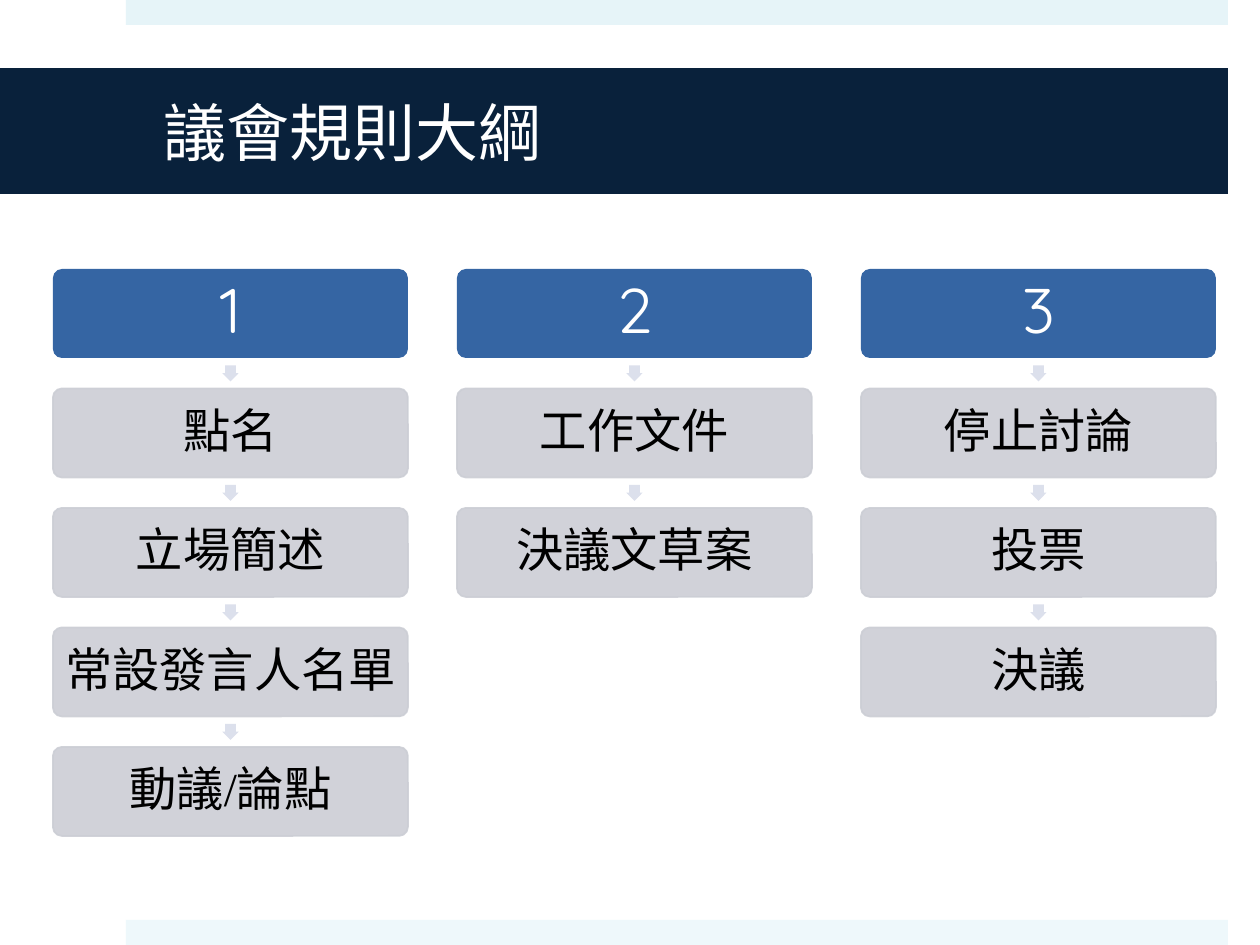
from lxml.etree import SubElement
from pptx import Presentation
from pptx.dml.color import RGBColor
from pptx.enum.shapes import MSO_SHAPE as SHAPE
from pptx.enum.text import MSO_ANCHOR, PP_ALIGN
from pptx.oxml.ns import qn
from pptx.util import Pt

PX = 914400 // 126  # EMU per px
TITLE = "議會規則大綱"
COLUMNS = [
    ("1", ["點名", "立場簡述", "常設發言人名單", "動議/論點"]),
    ("2", ["工作文件", "決議文草案"]),
    ("3", ["停止討論", "投票", "決議"]),
]
BANDS = [(0, "E6F4F8"), (920, "EEF8FB")]  # top, colour
LEFT, TOP, BOX_W, BOX_H = 53, 269, 355, 89
COL_STEP, ROW_STEP = 404, 119.5
ARROW = 16


def emu(*lengths):
    return [round(n * PX) for n in lengths]


def rgb(code):
    return RGBColor.from_string(code)


def paint(sp, color, line=None, alpha=None):
    sp.shadow.inherit = False
    sp.fill.solid()
    sp.fill.fore_color.rgb = rgb(color)
    if line:
        sp.line.color.rgb = rgb(line)
        sp.line.width = Pt(1)
    else:
        sp.line.fill.background()
    if alpha:
        for clr in sp._element.spPr.iter(qn("a:srgbClr")):
            SubElement(clr, qn("a:alpha"), val=str(alpha * 1000))


def write(sp, text, size, font, color, align, margins):
    tf = sp.text_frame
    tf.word_wrap = True
    tf.vertical_anchor = MSO_ANCHOR.MIDDLE
    tf.margin_left, tf.margin_top, tf.margin_right, tf.margin_bottom = emu(*margins)
    tf.text = text
    p = tf.paragraphs[0]
    p.alignment = align
    p.font.size, p.font.name = Pt(size), font
    p.font.color.rgb = rgb(color)
    return p


def add_box(shapes, x, y, text, header):
    sp = shapes.add_shape(SHAPE.ROUNDED_RECTANGLE, *emu(x, y, BOX_W, BOX_H))
    sp.adjustments[0] = 0.1
    if header:
        paint(sp, "3565A3")
        style = (36, "Quicksand", "FFFFFF")
    else:
        paint(sp, "CCCED5", line="CCCED5", alpha=90)
        style = (27, "Times New Roman", "000000")
    p = write(sp, text, *style, PP_ALIGN.CENTER, [5] * 4)
    p.line_spacing = 0.9


def add_arrow(shapes, x, y):
    """Put a small downward arrow centred on x, y."""
    sp = shapes.add_shape(SHAPE.RIGHT_ARROW,
                          *emu(x - ARROW / 2, y - ARROW / 2, ARROW, ARROW))
    sp.rotation = 90
    sp.adjustments[0] = 0.67
    paint(sp, "DCE0EC")


prs = Presentation()
prs.slide_width, prs.slide_height = emu(1260, 945)
slide = prs.slides.add_slide(prs.slide_layouts[5])
shapes = slide.shapes

for top, color in BANDS:
    paint(shapes.add_shape(SHAPE.RECTANGLE, *emu(126, top, 1102, 25)), color)

title = shapes.title
title.left, title.top, title.width, title.height = emu(0, 68, 1228, 126)
title.fill.solid()
title.fill.fore_color.rgb = rgb("09213B")
p = write(title, TITLE, 36, "Noto Sans CJK SC", "FFFFFF", PP_ALIGN.LEFT, (164, 6, 38, 6))
SubElement(p.font._element, qn("a:ea"), typeface="Noto Sans CJK SC")

for col, (number, steps) in enumerate(COLUMNS):
    x = LEFT + col * COL_STEP
    for row, text in enumerate([number, *steps]):
        y = TOP + row * ROW_STEP
        if row:
            add_arrow(shapes, x + BOX_W / 2, y - (ROW_STEP - BOX_H) / 2)
        add_box(shapes, x, y, text, header=row == 0)

prs.save("out.pptx")
